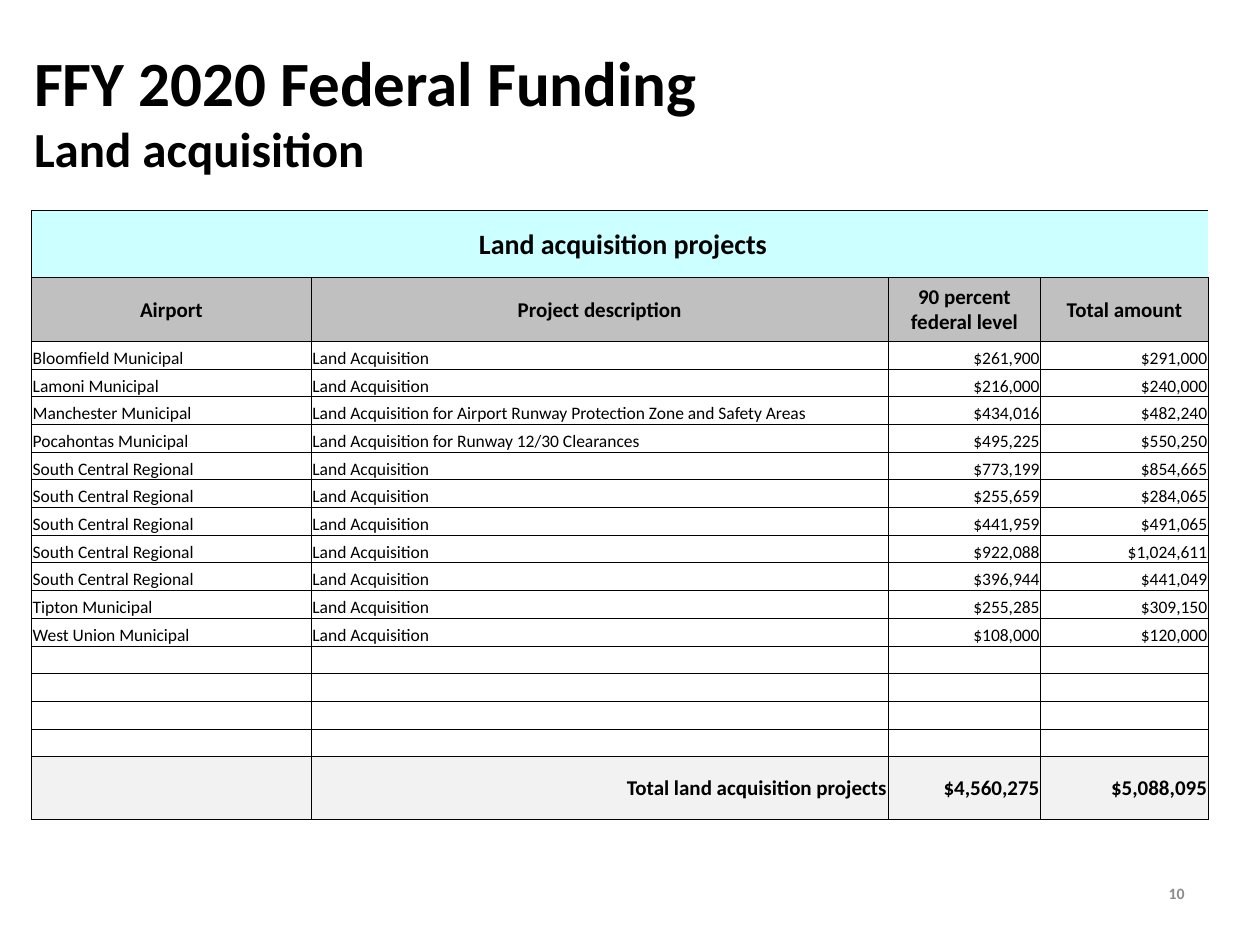
from dataclasses import dataclass

from lxml.etree import SubElement
from pptx import Presentation
from pptx.dml.color import RGBColor
from pptx.enum.text import MSO_ANCHOR, MSO_AUTO_SIZE, PP_ALIGN
from pptx.oxml.ns import qn
from pptx.util import Inches, Pt


@dataclass(frozen=True)
class Theme:
    font: str = "Calibri"
    text: str = "000000"
    muted: str = "8C8C8C"
    banner: str = "CCFFFF"
    header: str = "C0C0C0"
    total: str = "F2F2F2"
    title_size: int = 36
    subtitle_size: int = 28
    banner_size: int = 16
    header_size: int = 12
    body_size: int = 10
    number_size: int = 9
    border: float = 0.5


THEME = Theme()
LEFT, CENTER, RIGHT = PP_ALIGN.LEFT, PP_ALIGN.CENTER, PP_ALIGN.RIGHT
COLUMN_WIDTHS = [2.22, 4.58, 1.21, 1.33]
COLUMN_ALIGNS = [LEFT, LEFT, RIGHT, RIGHT]
BANNER_HEIGHT, HEADER_HEIGHT, ROW_HEIGHT, TOTAL_HEIGHT = 0.53, 0.51, 0.22, 0.5
BLANK_ROWS = 4

BANNER = " Land acquisition projects"
HEADERS = ["Airport", "Project description", "90 percent federal level", "Total amount"]
LAND = "Land Acquisition"
PROJECTS = [
    ["Bloomfield Municipal", LAND, "$261,900", "$291,000"],
    ["Lamoni Municipal", LAND, "$216,000", "$240,000"],
    ["Manchester Municipal",
     "Land Acquisition for Airport Runway Protection Zone and Safety Areas",
     "$434,016", "$482,240"],
    ["Pocahontas Municipal", "Land Acquisition for Runway 12/30 Clearances",
     "$495,225", "$550,250"],
    ["South Central Regional", LAND, "$773,199", "$854,665"],
    ["South Central Regional", LAND, "$255,659", "$284,065"],
    ["South Central Regional", LAND, "$441,959", "$491,065"],
    ["South Central Regional", LAND, "$922,088", "$1,024,611"],
    ["South Central Regional", LAND, "$396,944", "$441,049"],
    ["Tipton Municipal", LAND, "$255,285", "$309,150"],
    ["West Union Municipal", LAND, "$108,000", "$120,000"],
]
TOTALS = ["", "Total land acquisition projects", "$4,560,275", "$5,088,095"]


def format_run(r, size, bold=True, color=THEME.text):
    r.font.name = THEME.font
    r.font.size = Pt(size)
    r.font.bold = bold
    r.font.color.rgb = RGBColor.from_string(color)


def add_title(s, title, subtitle):
    sp = s.shapes.title
    sp.left, sp.top, sp.width, sp.height = map(Inches, (0.17, 0.25, 9.42, 1.25))
    tf = sp.text_frame
    tf.auto_size = MSO_AUTO_SIZE.NONE
    tf.vertical_anchor = MSO_ANCHOR.MIDDLE
    p = tf.paragraphs[0]
    p.text = f"{title}\v{subtitle}"
    p.alignment = LEFT
    for r, size in zip(p.runs, (THEME.title_size, THEME.subtitle_size)):
        format_run(r, size)


def add_page_number(s, number):
    sp = s.shapes.add_textbox(Inches(7.17), Inches(6.83), Inches(2.33), Inches(0.52))
    tf = sp.text_frame
    tf.word_wrap = True
    tf.vertical_anchor = MSO_ANCHOR.MIDDLE
    p = tf.paragraphs[0]
    p.text = number
    p.alignment = RIGHT
    format_run(p.runs[0], THEME.number_size, color=THEME.muted)


def set_borders(cell, sides):
    tc_pr = cell._tc.get_or_add_tcPr()
    for side in ("L", "R", "T", "B"):
        width = str(Pt(THEME.border)) if side in sides else "0"
        ln = SubElement(tc_pr, qn(f"a:ln{side}"), w=width)
        if side in sides:
            fill = SubElement(ln, qn("a:solidFill"))
            SubElement(fill, qn("a:srgbClr"), val=THEME.text)
        else:
            SubElement(ln, qn("a:noFill"))


def fill_cell(cell, text, size, align, fill=None, bold=True,
              anchor=MSO_ANCHOR.MIDDLE, sides="LRTB"):
    set_borders(cell, sides)
    if fill:
        cell.fill.solid()
        cell.fill.fore_color.rgb = RGBColor.from_string(fill)
    else:
        cell.fill.background()
    cell.margin_left = cell.margin_right = cell.margin_top = Inches(0.01)
    cell.margin_bottom = 0
    cell.vertical_anchor = anchor
    p = cell.text_frame.paragraphs[0]
    p.alignment = align
    if text:
        p.text = text
        format_run(p.runs[0], size, bold)
    else:
        # Keeps an empty cell from growing to the default text size
        SubElement(p._p, qn("a:endParaRPr"), sz=str(size * 100))


def add_projects_table(s):
    body = PROJECTS + [[""] * len(HEADERS)] * BLANK_ROWS
    heights = [BANNER_HEIGHT, HEADER_HEIGHT] + [ROW_HEIGHT] * len(body) + [TOTAL_HEIGHT]
    frame = s.shapes.add_table(len(heights), len(HEADERS), Inches(0.25), Inches(1.67),
                               Inches(sum(COLUMN_WIDTHS)), Inches(sum(heights)))
    table = frame.table
    table.first_row = table.horz_banding = False
    for column, width in zip(table.columns, COLUMN_WIDTHS):
        column.width = Inches(width)
    for row, height in zip(table.rows, heights):
        row.height = Inches(height)

    # Banner across all columns, open on the right
    last = len(HEADERS) - 1
    table.cell(0, 0).merge(table.cell(0, last))
    for c in range(len(HEADERS)):
        fill_cell(table.cell(0, c), "" if c else BANNER, THEME.banner_size, CENTER,
                  THEME.banner, sides="TB" if c else "LTB")

    # Header, projects and totals
    for c, align in enumerate(COLUMN_ALIGNS):
        fill_cell(table.cell(1, c), HEADERS[c], THEME.header_size, CENTER, THEME.header)
        for i, values in enumerate(body, start=2):
            fill_cell(table.cell(i, c), values[c], THEME.body_size, align,
                      bold=False, anchor=MSO_ANCHOR.BOTTOM)
        fill_cell(table.cell(len(heights) - 1, c), TOTALS[c], THEME.header_size,
                  RIGHT, THEME.total)


def main():
    prs = Presentation()
    prs.slide_width, prs.slide_height = Inches(10), Inches(7.5)
    s = prs.slides.add_slide(prs.slide_layouts[5])
    add_page_number(s, "10")
    add_title(s, "FFY 2020 Federal Funding", "Land acquisition")
    add_projects_table(s)
    prs.save("out.pptx")


if __name__ == "__main__":
    main()
